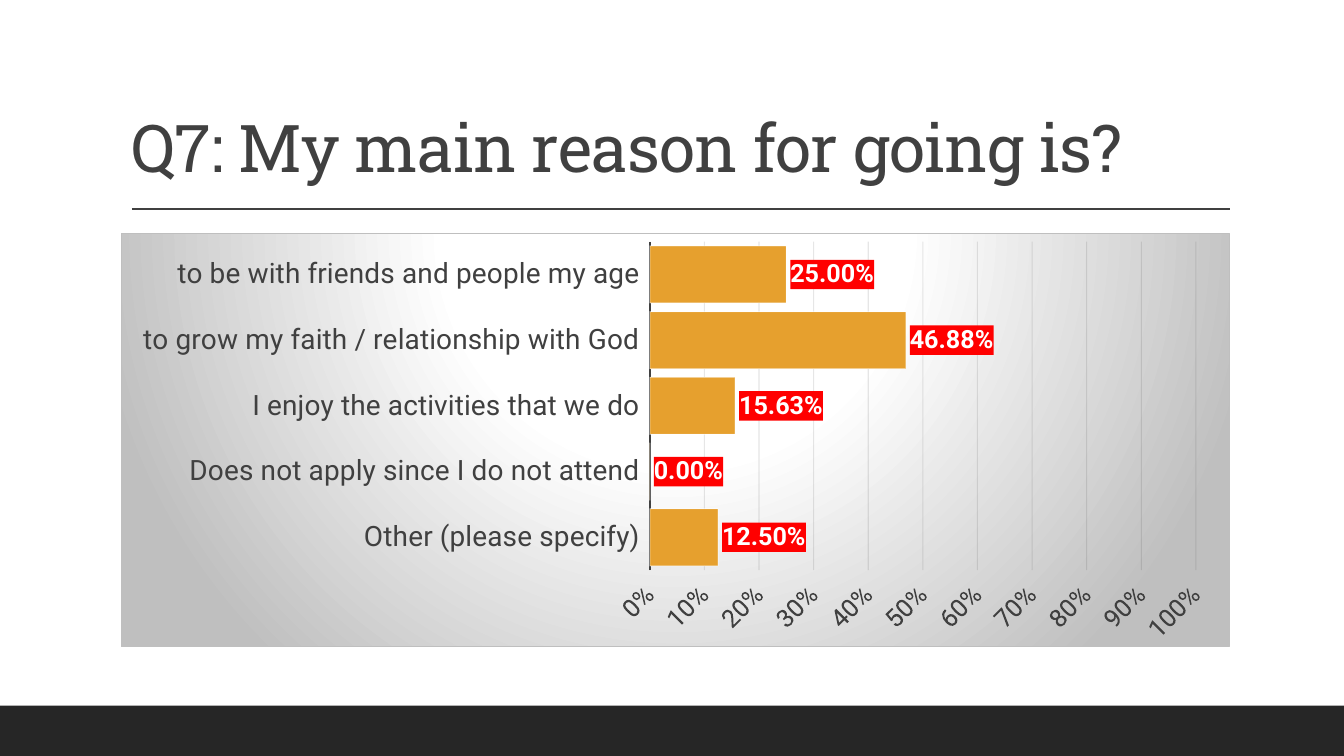
from lxml.etree import SubElement
from pptx import Presentation
from pptx.chart.data import CategoryChartData
from pptx.dml.color import RGBColor
from pptx.enum.chart import (XL_CHART_TYPE, XL_LABEL_POSITION,
                             XL_TICK_LABEL_POSITION, XL_TICK_MARK)
from pptx.enum.shapes import MSO_CONNECTOR, MSO_SHAPE
from pptx.enum.text import MSO_ANCHOR, MSO_AUTO_SIZE, PP_ALIGN
from pptx.oxml import parse_xml
from pptx.oxml.ns import nsdecls, qn
from pptx.util import Pt

WHITE = RGBColor(0xFF, 0xFF, 0xFF)
CHARCOAL = RGBColor(0x26, 0x26, 0x26)
GRAY = RGBColor(0x40, 0x40, 0x40)
GRID = RGBColor(0x0D, 0x0D, 0x0D)
AMBER = RGBColor(0xE6, 0xA0, 0x2E)
RED = RGBColor(0xFF, 0x00, 0x00)

REASONS = {
    "to be with friends and people my age": 0.25,
    "to grow my faith / relationship with God": 0.4688,
    "I enjoy the activities that we do": 0.1563,
    "Does not apply since I do not attend": 0,
    "Other (please specify)": 0.125,
}


def set_font(font, size, color, bold=False, name="Roboto"):
    for attribute, value in {"name": name, "size": Pt(size), "bold": bold}.items():
        setattr(font, attribute, value)
    font.color.rgb = color


def set_line(line, color, width, opacity=100):
    line.color.rgb = color
    line.width = Pt(width)
    if opacity < 100:
        color_node = line.fill._xPr.find(qn("a:solidFill"))[0]
        SubElement(color_node, qn("a:alpha")).set("val", str(opacity * 1000))


deck = Presentation()
deck.slide_width, deck.slide_height = Pt(960), Pt(540)
slide = deck.slides.add_slide(deck.slide_layouts[5])

# Footer band
footer = slide.shapes.add_shape(MSO_SHAPE.RECTANGLE, Pt(0), Pt(504), Pt(960), Pt(36))
footer.shadow.inherit = False
footer.fill.solid()
footer.fill.fore_color.rgb = CHARCOAL
footer.line.fill.background()

# Rule under the title
rule = slide.shapes.add_connector(MSO_CONNECTOR.STRAIGHT, Pt(94.3), Pt(149.2), Pt(878.8), Pt(149.2))
set_line(rule.line, GRAY, 1)
SubElement(rule._element.spPr, qn("a:effectLst"))

# Title
question = slide.shapes.title
question.left, question.top, question.width, question.height = Pt(86.4), Pt(22.3), Pt(792), Pt(114.5)
frame = question.text_frame
frame.text = "Q7: My main reason for going is?"
frame.word_wrap = True
frame.auto_size = MSO_AUTO_SIZE.NONE
frame.vertical_anchor = MSO_ANCHOR.BOTTOM
paragraph = frame.paragraphs[0]
paragraph.alignment = PP_ALIGN.LEFT
paragraph.line_spacing = 0.9
run = paragraph.runs[0]
set_font(run.font, 47, GRAY, name="Roboto Slab")
run.font._element.set("spc", "-50")

# Answers chart
answers = CategoryChartData(number_format="0.00%")
answers.categories = list(REASONS)
answers.add_series("Series 1", list(REASONS.values()))
chart = slide.shapes.add_chart(XL_CHART_TYPE.BAR_CLUSTERED, Pt(86.4), Pt(166.3),
                               Pt(792), Pt(296), answers).chart
chart.has_legend = False
chart.has_title = False
set_font(chart.font, 18, GRAY)

# Radial background, lit from above the chart
chart._chartSpace.chart.addnext(parse_xml(f"""
<c:spPr {nsdecls("c", "a")}>
  <a:gradFill><a:gsLst>
    <a:gs pos="0"><a:srgbClr val="FFFFFF"/></a:gs>
    <a:gs pos="39000"><a:srgbClr val="FFFFFF"/></a:gs>
    <a:gs pos="100000"><a:srgbClr val="BFBFBF"/></a:gs>
  </a:gsLst><a:path path="circle">
    <a:fillToRect l="50000" t="-80000" r="50000" b="180000"/>
  </a:path></a:gradFill>
  <a:ln w="9525"><a:solidFill><a:srgbClr val="BFBFBF"/></a:solidFill></a:ln>
</c:spPr>"""))

# Plot area position, as shares of the chart
plot_area = chart._chartSpace.chart.plotArea
for old_layout in plot_area.findall(qn("c:layout")):
    plot_area.remove(old_layout)
layout = parse_xml(f'<c:layout {nsdecls("c")}><c:manualLayout/></c:layout>')
placement = {"layoutTarget": "inner", "xMode": "edge", "yMode": "edge",
             "x": 0.477, "y": 0.02, "w": 0.493, "h": 0.795}
for tag, value in placement.items():
    SubElement(layout[0], qn(f"c:{tag}")).set("val", str(value))
plot_area.insert(0, layout)

# Axes: reasons run downwards, shares are labelled at the bottom
reasons_axis, share_axis = chart.category_axis, chart.value_axis
for axis, size, side in ((reasons_axis, 20, XL_TICK_LABEL_POSITION.LOW),
                         (share_axis, 18, XL_TICK_LABEL_POSITION.HIGH)):
    axis.major_tick_mark = axis.minor_tick_mark = XL_TICK_MARK.NONE
    axis.tick_label_position = side
    set_font(axis.tick_labels.font, size, GRAY)
reasons_axis.reverse_order = True
set_line(reasons_axis.format.line, GRAY, 1.5)

share_axis.minimum_scale, share_axis.maximum_scale, share_axis.major_unit = 0, 1, 0.1
share_axis.tick_labels.number_format = "0%"
share_axis.tick_labels.number_format_is_linked = False
share_axis._element.txPr.find(qn("a:bodyPr")).set("rot", "-2700000")
share_axis.format.line.fill.background()
set_line(share_axis.major_gridlines.format.line, GRID, 0.75, opacity=10)

# Bars
plot = chart.plots[0]
plot.gap_width = 15
plot.vary_by_categories = False
bars = plot.series[0]
bars.format.fill.solid()
bars.format.fill.fore_color.rgb = AMBER
set_line(bars.format.line, WHITE, 0.75, opacity=50)

# Red value labels
labels = bars.data_labels
for attribute, value in {"show_value": True, "number_format": "0.00%",
                         "number_format_is_linked": False,
                         "position": XL_LABEL_POSITION.OUTSIDE_END}.items():
    setattr(labels, attribute, value)
set_font(labels.font, 18, WHITE, bold=True)
labels._element.find(qn("c:txPr")).addprevious(parse_xml(
    f'<c:spPr {nsdecls("c", "a")}><a:solidFill><a:srgbClr val="{RED}"/></a:solidFill></c:spPr>'))

deck.save("out.pptx")
